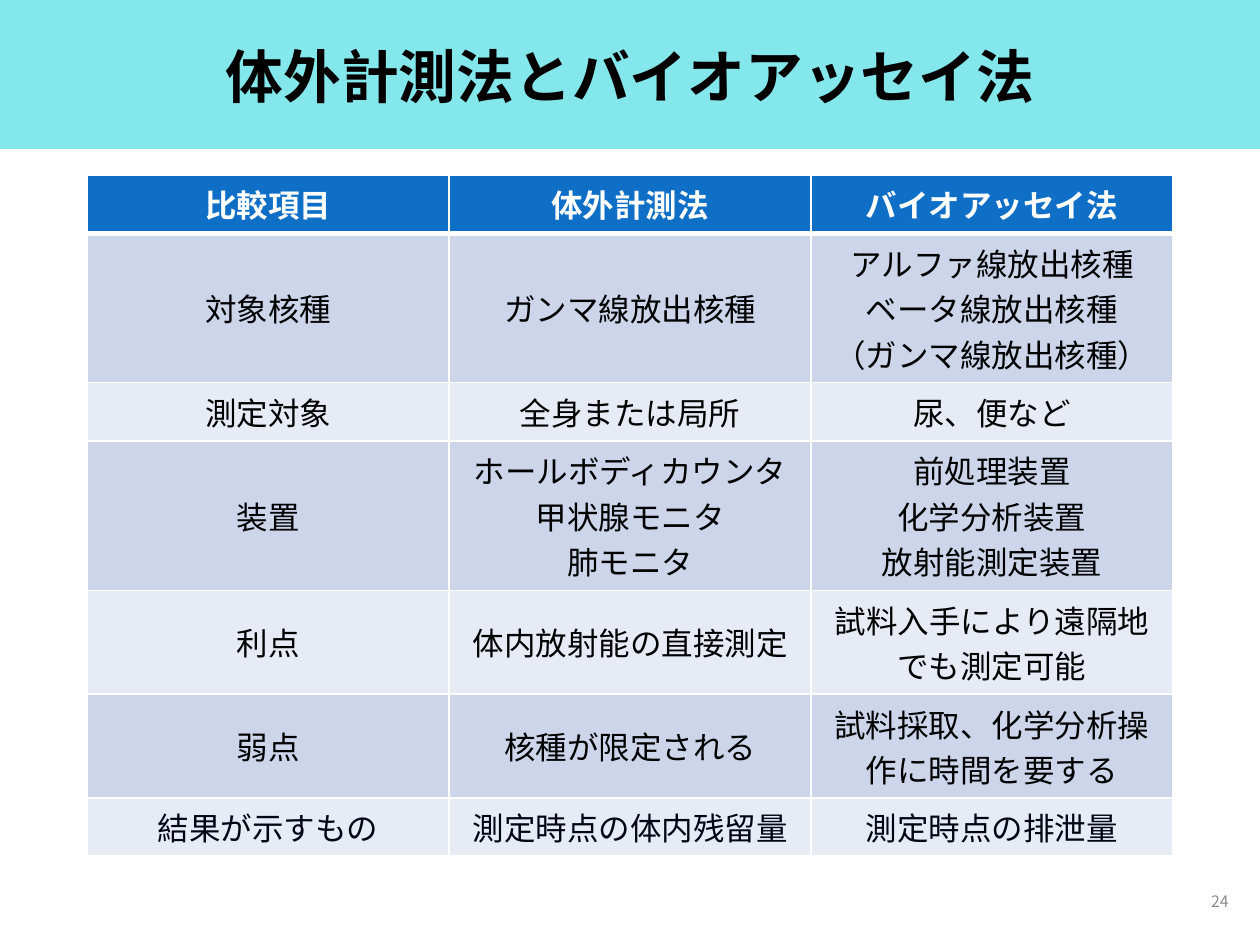
from typing import NamedTuple

from lxml.etree import SubElement
from pptx import Presentation
from pptx.dml.color import RGBColor
from pptx.enum.shapes import MSO_SHAPE
from pptx.enum.text import MSO_ANCHOR, MSO_AUTO_SIZE, PP_ALIGN
from pptx.oxml.ns import qn
from pptx.util import Emu, Pt

SCALE = 914400 / 126
SANS = "Noto Sans CJK JP"
AQUA = RGBColor(0x0B, 0xD0, 0xD9)
BLUE = RGBColor(0x0F, 0x6F, 0xC6)
DARK = RGBColor(0xCC, 0xD5, 0xEA)
PALE = RGBColor(0xE7, 0xEB, 0xF5)
WHITE = RGBColor(0xFF, 0xFF, 0xFF)
BLACK = RGBColor(0, 0, 0)
NAVY = RGBColor(0x00, 0x05, 0x14)
GRAY = RGBColor(0x8C, 0x8C, 0x8C)


class Box(NamedTuple):
    left: int
    top: int
    width: int
    height: int


class Style(NamedTuple):
    size: int
    color: RGBColor
    bold: bool = False
    face: str = "Arial"


class Row(NamedTuple):
    height: int
    fill: RGBColor
    style: Style
    cells: tuple[str, str, str]


HEAD = Style(18, WHITE, True)
BODY = Style(18, BLACK)
LAST = Style(18, NAVY)

ROWS = [
    Row(58, BLUE, HEAD, ("比較項目", "体外計測法", "バイオアッセイ法")),
    Row(144, DARK, BODY, ("対象核種", "ガンマ線放出核種",
                          "アルファ線放出核種\nベータ線放出核種\n（ガンマ線放出核種）")),
    Row(58, PALE, BODY, ("測定対象", "全身または局所", "尿、便など")),
    Row(144, DARK, BODY, ("装置", "ホールボディカウンタ\n甲状腺モニタ\n肺モニタ",
                          "前処理装置\n化学分析装置\n放射能測定装置")),
    Row(101, PALE, BODY, ("利点", "体内放射能の直接測定", "試料入手により遠隔地でも測定可能")),
    Row(101, DARK, BODY, ("弱点", "核種が限定される", "試料採取、化学分析操作に時間を要する")),
    Row(58, PALE, LAST, ("結果が示すもの", "測定時点の体内残留量", "測定時点の排泄量")),
]


def px(value: int) -> Emu:
    return Emu(round(value * SCALE))


def place(box: Box) -> list[Emu]:
    return [px(side) for side in box]


def write(frame, text: str, style: Style, align: PP_ALIGN) -> None:
    for index, line in enumerate(text.split("\n")):
        para = frame.add_paragraph() if index else frame.paragraphs[0]
        para.alignment = align
        run = para.add_run()
        run.text = line
        font = run.font
        font.size = Pt(style.size)
        font.bold = style.bold
        font.color.rgb = style.color
        font.name = style.face
        SubElement(run._r.get_or_add_rPr(), qn("a:ea"), typeface=SANS)


def edge(cell, side: str, width: int) -> None:
    line = SubElement(cell._tc.get_or_add_tcPr(), qn(f"a:ln{side}"), w=str(Pt(width)))
    fill = SubElement(line, qn("a:solidFill"))
    SubElement(fill, qn("a:srgbClr"), val=str(WHITE))


def draw_band(slide, box: Box) -> None:
    band = slide.shapes.add_shape(MSO_SHAPE.RECTANGLE, *place(box))
    band.shadow.inherit = False
    band.fill.solid()
    band.fill.fore_color.rgb = AQUA
    band.line.fill.background()
    color = band._element.spPr.find(qn("a:solidFill"))[0]
    SubElement(color, qn("a:alpha"), val="50000")
    slide.shapes._spTree.insert(2, band._element)


def draw_title(slide, box: Box, text: str) -> None:
    title = slide.shapes.title
    title.left, title.top, title.width, title.height = place(box)
    frame = title.text_frame
    frame.auto_size = MSO_AUTO_SIZE.NONE
    frame.vertical_anchor = MSO_ANCHOR.MIDDLE
    write(frame, text, Style(33, BLACK, True, SANS), PP_ALIGN.CENTER)
    frame.paragraphs[0].line_spacing = 0.9


def draw_table(slide, box: Box, rows: list[Row]) -> None:
    count = len(rows[0].cells)
    table = slide.shapes.add_table(len(rows), count, *place(box)).table
    for column in table.columns:
        column.width = px(box.width // count)
    for y, row in enumerate(rows):
        table.rows[y].height = px(row.height)
        for x, text in enumerate(row.cells):
            cell = table.cell(y, x)
            cell.vertical_anchor = MSO_ANCHOR.MIDDLE
            edge(cell, "L", 1)
            edge(cell, "R", 1)
            edge(cell, "T", 3 if y == 1 else 1)
            edge(cell, "B", 3 if y == 0 else 1)
            cell.fill.solid()
            cell.fill.fore_color.rgb = row.fill
            write(cell.text_frame, text, row.style, PP_ALIGN.CENTER)


def draw_page(slide, box: Box, text: str) -> None:
    frame = slide.shapes.add_textbox(*place(box)).text_frame
    frame.word_wrap = True
    frame.vertical_anchor = MSO_ANCHOR.MIDDLE
    write(frame, text, Style(9, GRAY, False, SANS), PP_ALIGN.RIGHT)


def main() -> None:
    deck = Presentation()
    deck.slide_width, deck.slide_height = px(1260), px(945)
    slide = deck.slides.add_slide(deck.slide_layouts[5])
    draw_band(slide, Box(0, 0, 1260, 149))
    draw_title(slide, Box(87, 26, 1086, 107), "体外計測法とバイオアッセイ法")
    draw_table(slide, Box(87, 175, 1086, sum(row.height for row in ROWS)), ROWS)
    draw_page(slide, Box(958, 876, 283, 50), "24")
    deck.save("out.pptx")


if __name__ == "__main__":
    main()
